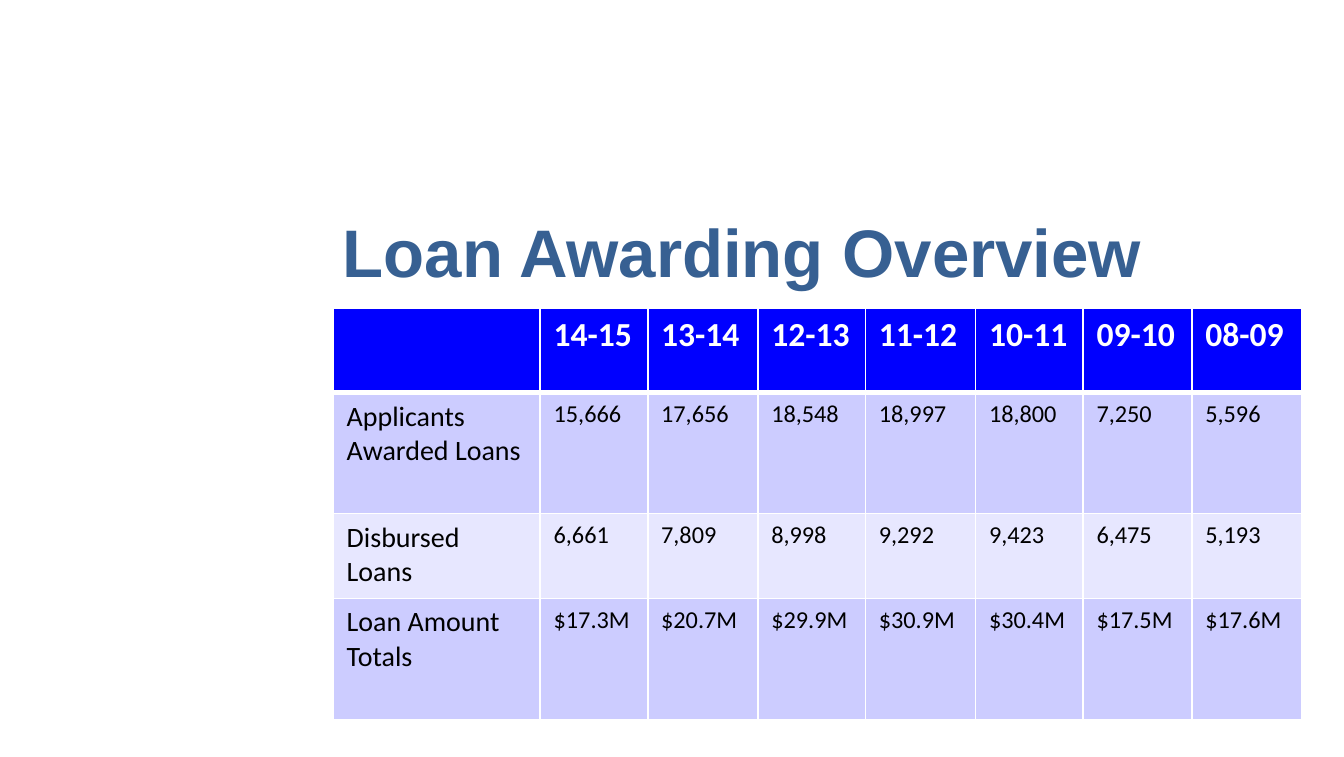
"""Build the loan awarding overview slide."""
from lxml.etree import SubElement as Sub
from pptx import Presentation
from pptx.dml.color import RGBColor as RGB
from pptx.enum.text import MSO_ANCHOR as Anchor, PP_ALIGN as Align
from pptx.oxml.ns import qn
from pptx.util import Inches, Pt

TITLE = "Loan Awarding Overview"
ROWS = [
    ["", "14-15", "13-14", "12-13", "11-12", "10-11", "09-10", "08-09"],
    ["Applicants \vAwarded Loans", "15,666", "17,656", "18,548", "18,997", "18,800", "7,250", "5,596"],
    ["Disbursed Loans", "6,661", "7,809", "8,998", "9,292", "9,423", "6,475", "5,193"],
    ["Loan Amount\vTotals", "$17.3M", "$20.7M", "$29.9M", "$30.9M", "$30.4M", "$17.5M", "$17.6M"],
]
WIDTHS = [1.54, 0.8, 0.82, 0.8, 0.82, 0.8, 0.81, 0.82]
HEIGHTS = [0.63, 0.9, 0.63, 0.9]
COLORS = {"title": "376092", "head": "0000FF", "dark": "CCCCFF",
          "light": "E7E7FF", "white": "FFFFFF", "black": "000000"}
FONTS = {
    "title": {"name": "Arial", "size": Pt(36), "bold": True},
    "head": {"name": "Calibri", "size": Pt(18), "bold": True},
    "label": {"name": "Calibri", "size": Pt(15), "bold": False},
    "value": {"name": "Calibri", "size": Pt(13), "bold": False},
}


def style(para, kind, color):
    for key, val in FONTS[kind].items():
        setattr(para.font, key, val)
    para.font.color.rgb = RGB.from_string(COLORS[color])
    para.alignment = Align.LEFT


def edge(cell, row):
    props = cell._tc.get_or_add_tcPr()
    for side in "LRTB":
        thick = (row, side) in ((0, "B"), (1, "T"))
        line = Sub(props, qn(f"a:ln{side}"), w=str(Pt(3 if thick else 1)))
        Sub(Sub(line, qn("a:solidFill")), qn("a:srgbClr"), val=COLORS["white"])


def add_title(slide):
    box = slide.shapes.title
    place = {"left": 2.45, "top": 1.26, "width": 7.21, "height": 1.21}
    for key, val in place.items():
        setattr(box, key, Inches(val))
    frame = box.text_frame
    frame.text = TITLE
    frame.vertical_anchor = Anchor.MIDDLE
    style(frame.paragraphs[0], "title", "title")


def add_grid(slide):
    size = map(Inches, (2.48, 2.29, sum(WIDTHS), sum(HEIGHTS)))
    grid = slide.shapes.add_table(len(ROWS), len(WIDTHS), *size).table
    for col, width in zip(grid.columns, WIDTHS):
        col.width = Inches(width)
    for r, (row, height) in enumerate(zip(ROWS, HEIGHTS)):
        grid.rows[r].height = Inches(height)
        fill = "head" if r == 0 else "dark" if r % 2 else "light"
        for c, text in enumerate(row):
            cell = grid.cell(r, c)
            cell.text = text
            edge(cell, r)
            cell.fill.solid()
            cell.fill.fore_color.rgb = RGB.from_string(COLORS[fill])
            kind = "head" if r == 0 else "value" if c else "label"
            style(cell.text_frame.paragraphs[0], kind, "black" if r else "white")


def main():
    deck = Presentation()
    deck.slide_width, deck.slide_height = Inches(10), Inches(5.63)
    slide = deck.slides.add_slide(deck.slide_layouts[5])
    add_title(slide)
    add_grid(slide)
    deck.save("out.pptx")


if __name__ == "__main__":
    main()
